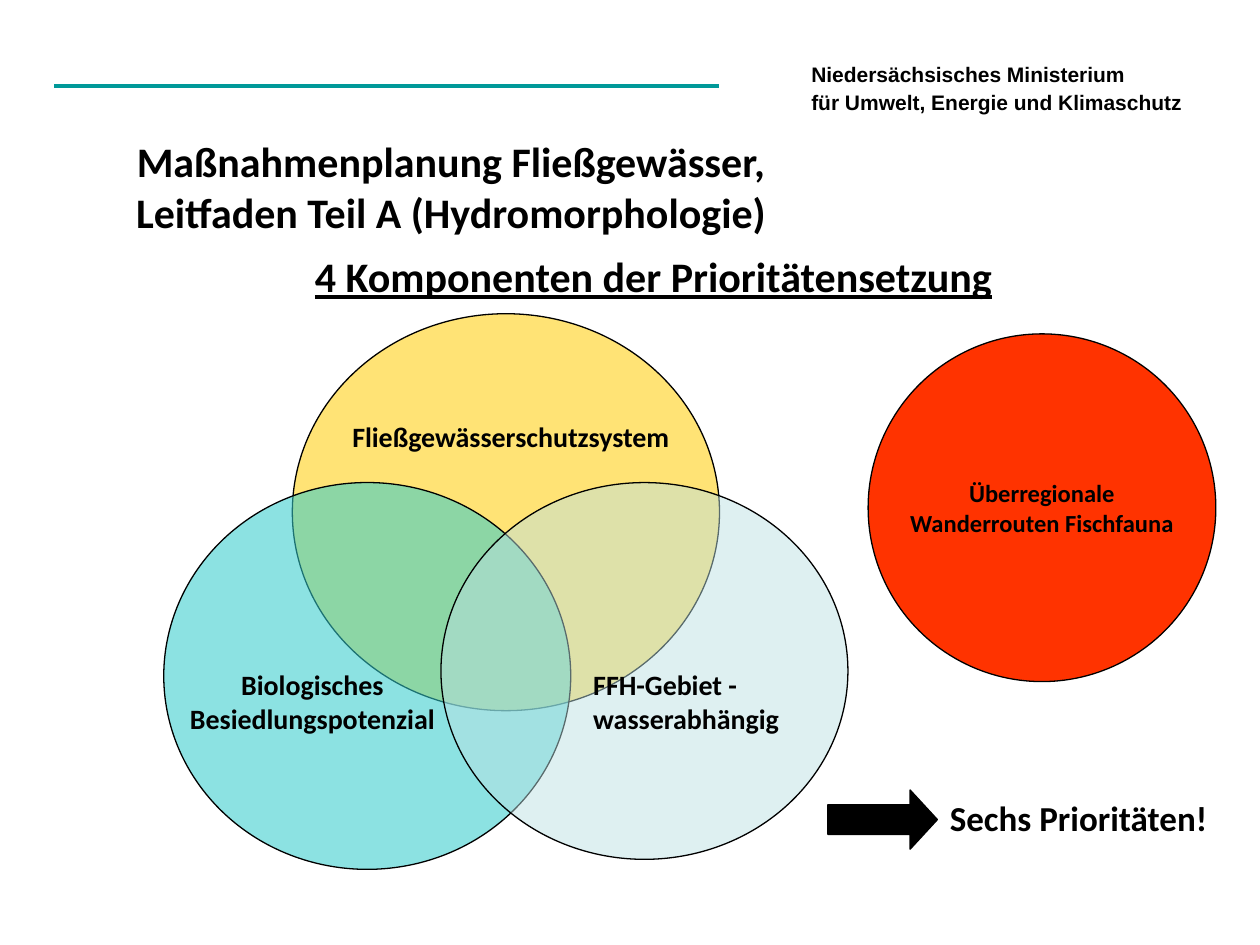
import pptx
import pptx.util
import pptx.dml.color
import pptx.enum.shapes
import pptx.enum.text
import pptx.oxml.ns
from lxml import etree

Inches = pptx.util.Inches
Pt = pptx.util.Pt
RGBColor = pptx.dml.color.RGBColor
Shape = pptx.enum.shapes.MSO_SHAPE
Align = pptx.enum.text.PP_ALIGN
Anchor = pptx.enum.text.MSO_ANCHOR
qn = pptx.oxml.ns.qn

BLACK = RGBColor(0x00, 0x00, 0x00)
TEAL = RGBColor(0x00, 0x99, 0x99)
YELLOW = RGBColor(0xFF, 0xCC, 0x00)
AQUA = RGBColor(0x33, 0xCC, 0xCC)
PALE = RGBColor(0xBB, 0xE0, 0xE3)
RED = RGBColor(0xFF, 0x33, 0x00)


def write(frame, text, size, align=Align.LEFT, face="Calibri", under=None):
    """Fill a text frame with bold black text."""
    frame.text = text
    for para in frame.paragraphs:
        para.alignment = align
        for run in para.runs:
            font = run.font
            font.name, font.size, font.bold = face, Pt(size), True
            font.underline = under
            font.color.rgb = BLACK


def add_text(slide, box, text, size, **style):
    frame = slide.shapes.add_textbox(*map(Inches, box)).text_frame
    frame.word_wrap = True
    write(frame, text, size, **style)
    return frame


def add_form(slide, kind, box, color, alpha=None):
    """Add a filled shape with a thin black outline; alpha in percent."""
    form = slide.shapes.add_shape(kind, *map(Inches, box))
    form.shadow.inherit = False
    form.fill.solid()
    form.fill.fore_color.rgb = color
    form.line.color.rgb = BLACK
    form.line.width = Pt(0.75)
    if alpha:
        tint = form.fill._xPr.find(qn("a:solidFill"))[0]
        etree.SubElement(tint, qn("a:alpha"), val=str(alpha * 1000))
    return form


def add_rule(slide, left, right, top):
    rule = slide.shapes.add_connector(
        pptx.enum.shapes.MSO_CONNECTOR.STRAIGHT,
        Inches(left), Inches(top), Inches(right), Inches(top))
    rule.line.color.rgb = TEAL
    rule.line.width = Pt(2.25)
    etree.SubElement(rule._element.spPr, qn("a:effectLst"))


def main():
    deck = pptx.Presentation()
    deck.slide_width, deck.slide_height = Inches(10), Inches(7.5)
    slide = deck.slides.add_slide(deck.slide_layouts[6])

    # Header
    add_rule(slide, 0.43, 5.71, 0.68)
    head = add_text(
        slide, (6.34, 0.44, 3.22, 0.5),
        "Niedersächsisches Ministerium\vfür Umwelt, Energie und Klimaschutz",
        12, face="Arial")
    head.vertical_anchor = Anchor.MIDDLE
    head.paragraphs[0].line_spacing = Pt(16)

    # Overlapping circles
    for box, color, alpha in (
            ((2.32, 2.49, 3.39, 3.15), YELLOW, 54),
            ((1.3, 3.83, 3.23, 3.07), AQUA, 56),
            ((3.5, 3.83, 3.23, 2.99), PALE, 48)):
        add_form(slide, Shape.OVAL, box, color, alpha)

    # Circle labels
    for box, text, align in (
            ((1.14, 5.25, 2.68, 0.64),
             "Biologisches\vBesiedlungspotenzial", Align.CENTER),
            ((2.4, 3.28, 3.31, 0.77),
             "Fließgewässerschutzsystem", Align.CENTER),
            ((4.61, 5.25, 2.21, 0.64),
             "FFH-Gebiet - wasserabhängig", Align.LEFT)):
        add_text(slide, box, text, 16, align=align)

    # Separate circle
    fish = add_form(slide, Shape.OVAL, (6.89, 2.65, 2.76, 2.76), RED)
    fish.text_frame.word_wrap = False
    fish.text_frame.vertical_anchor = Anchor.MIDDLE
    write(fish.text_frame, "Überregionale\vWanderrouten Fischfauna", 14,
          Align.CENTER)

    # Result
    arrow = add_form(slide, Shape.RIGHT_ARROW, (6.57, 6.27, 0.87, 0.47), BLACK)
    arrow.adjustments[1] = 0.46
    add_text(slide, (7.44, 6.27, 2.5, 0.43), "Sechs Prioritäten!", 20)

    # Titles
    add_text(slide, (0.59, 1.03, 5.98, 0.91),
             "Maßnahmenplanung Fließgewässer,\n"
             "Leitfaden Teil A (Hydromorphologie)", 24, align=Align.CENTER)
    add_text(slide, (2.4, 1.94, 6.61, 0.5),
             "4 Komponenten der Prioritätensetzung", 24, under=True)

    deck.save("out.pptx")


if __name__ == "__main__":
    main()
